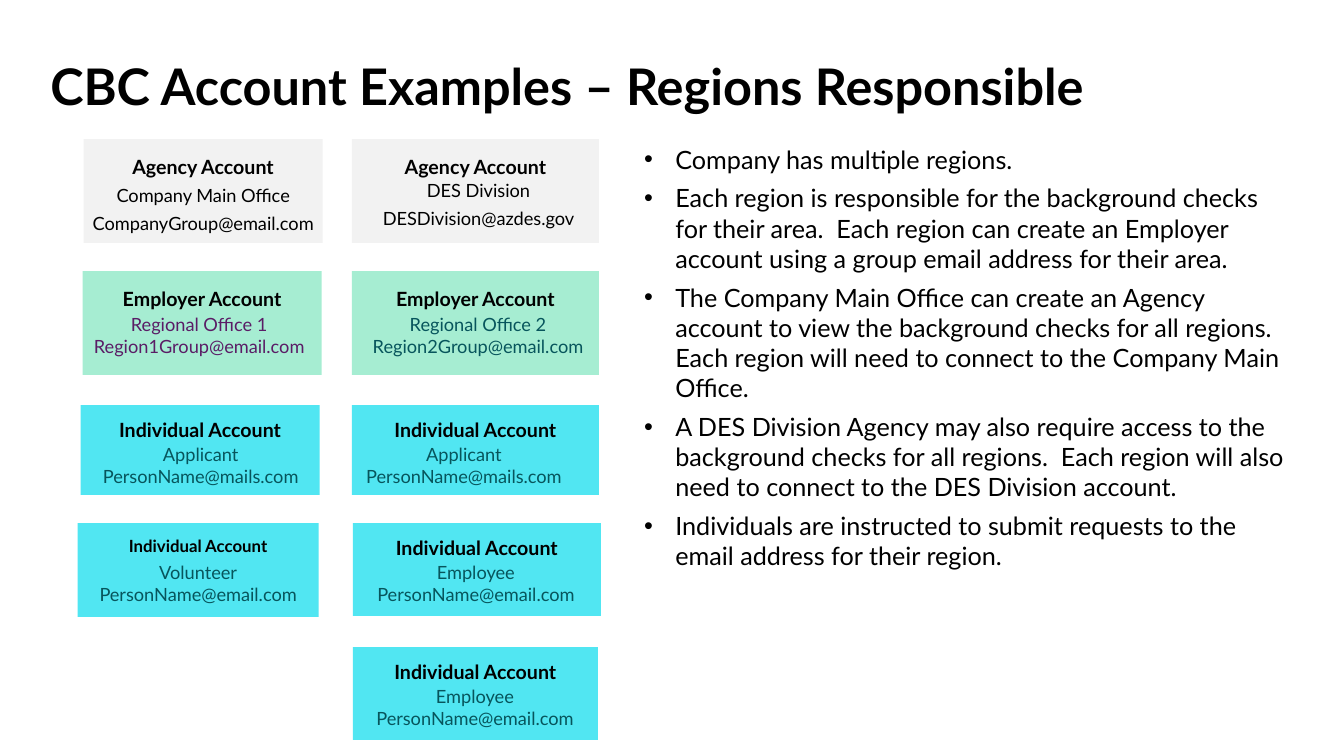
from pptx import Presentation
from pptx.dml.color import RGBColor
from pptx.enum.shapes import MSO_SHAPE
from pptx.enum.text import MSO_ANCHOR, PP_ALIGN
from pptx.oxml.ns import qn
from pptx.util import Inches, Pt
from lxml import etree

COLORS = {
    "black": "000000",
    "grey": "F2F2F2",
    "green": "A6EDD2",
    "cyan": "51E6F2",
    "purple": "5A1D66",
    "teal": "07555C",
}

deck = Presentation()
deck.slide_width = Inches(13.33)
deck.slide_height = Inches(7.5)
page = deck.slides.add_slide(deck.slide_layouts[6])


def write(box, lines, size, color="black", bold=False, align=PP_ALIGN.CENTER,
          spacing=1.0, before=0, insets=(0, 0, 0, 0.05), anchor=MSO_ANCHOR.TOP):
    frame = box.text_frame
    frame.word_wrap = True
    frame.vertical_anchor = anchor
    frame.margin_left, frame.margin_top, frame.margin_right, frame.margin_bottom = map(Inches, insets)
    frame.text = "\n".join(lines)
    for para in frame.paragraphs:
        para.alignment = align
        para.line_spacing = spacing
        para.space_before = Pt(before)
        for span in para.runs:
            span.font.name = "Lato"
            span.font.size = Pt(size)
            span.font.bold = bold
            span.font.color.rgb = RGBColor.from_string(COLORS[color])
    return frame.paragraphs


def add_text(area, lines, size, **style):
    return write(page.shapes.add_textbox(*map(Inches, area)), lines, size, **style)


add_text((0.4, 0.43, 12.58, 0.73), ["CBC Account Examples – Regions Responsible"], 36,
         bold=True, align=PP_ALIGN.LEFT, spacing=0.9,
         insets=(0.1, 0.05, 0.1, 0), anchor=MSO_ANCHOR.BOTTOM)

cards = [
    ("Agency Account", (0.83, 1.38, 2.37, 1.03), "grey", 14, 0.18),
    ("Agency Account", (3.49, 1.38, 2.45, 1.03), "grey", 14, 0.18),
    ("Employer Account", (0.82, 2.69, 2.37, 1.03), "green", 14, 0.18),
    ("Employer Account", (3.49, 2.69, 2.45, 1.03), "green", 14, 0.18),
    ("Individual Account", (0.8, 4.02, 2.37, 0.89), "cyan", 14, 0.15),
    ("Individual Account", (3.49, 4.02, 2.45, 0.89), "cyan", 14, 0.15),
    ("Individual Account", (0.77, 5.19, 2.39, 0.93), "cyan", 12, 0.15),
    ("Individual Account", (3.5, 5.19, 2.46, 0.92), "cyan", 14, 0.15),
    ("Individual Account", (3.5, 6.42, 2.43, 0.92), "cyan", 14, 0.15),
]
for heading, area, fill, size, top_inset in cards:
    card = page.shapes.add_shape(MSO_SHAPE.RECTANGLE, *map(Inches, area))
    card.shadow.inherit = False
    card.fill.solid()
    card.fill.fore_color.rgb = RGBColor.from_string(COLORS[fill])
    card.line.fill.background()
    lines = [heading]
    if area[:2] == (0.83, 1.38):
        lines += ["Company Main Office", "CompanyGroup@email.com"]
    paragraphs = write(card, lines, size, bold=True, spacing=0.9, before=10,
                       insets=(0, top_inset, 0, 0.05))
    for para in paragraphs[1:]:
        para.space_before = Pt(6)
        para.runs[0].font.size = Pt(13)
        para.runs[0].font.bold = False

division = add_text((3.55, 1.77, 2.39, 0.61), ["DES Division", "DESDivision@azdes.gov"], 13,
                    spacing=0.9, before=6, insets=(0, 0.05, 0, 0.05))
division[0].line_spacing = 0.8

details = [
    ("Regional Office 1", "Region1Group@email.com", (0.82, 3.06, 2.31, 0.34), "purple", 0.05),
    ("Regional Office 2", "Region2Group@email.com", (3.63, 3.06, 2.22, 0.34), "teal", 0.05),
    ("Applicant", "PersonName@mails.com", (0.82, 4.4, 2.34, 0.39), "teal", 0),
    ("Applicant", "PersonName@mails.com", (3.49, 4.4, 2.22, 0.39), "teal", 0),
    ("Volunteer", "PersonName@email.com", (0.78, 5.57, 2.37, 0.46), "teal", 0),
    ("Employee", "PersonName@email.com", (3.5, 5.57, 2.44, 0.47), "teal", 0),
    ("Employee", "PersonName@email.com", (3.5, 6.8, 2.42, 0.39), "teal", 0),
]
for role, address, area, color, top_inset in details:
    add_text(area, [role, address], 13, color=color, insets=(0, top_inset, 0, 0.05))

notes = [
    "Company has multiple regions.",
    "Each region is responsible for the background checks for their area.  "
    "Each region can create an Employer account using a group email address for their area.",
    "The Company Main Office can create an Agency account to view the background checks "
    "for all regions.  Each region will need to connect to the Company Main Office.",
    "A DES Division Agency may also require access to the background checks for all regions.  "
    "Each region will also need to connect to the DES Division account.",
    "Individuals are instructed to submit requests to the email address for their region.",
]
bullets = add_text((6.29, 1.38, 6.63, 4.38), notes, 18, align=PP_ALIGN.LEFT, before=6,
                   insets=(0.1, 0.05, 0.1, 0.05))
for para in bullets:
    properties = para._p.get_or_add_pPr()
    properties.set("marL", str(Inches(0.31)))
    properties.set("indent", str(-Inches(0.31)))
    etree.SubElement(properties, qn("a:buFont")).set("typeface", "Arial")
    etree.SubElement(properties, qn("a:buChar")).set("char", "•")

deck.save("out.pptx")
